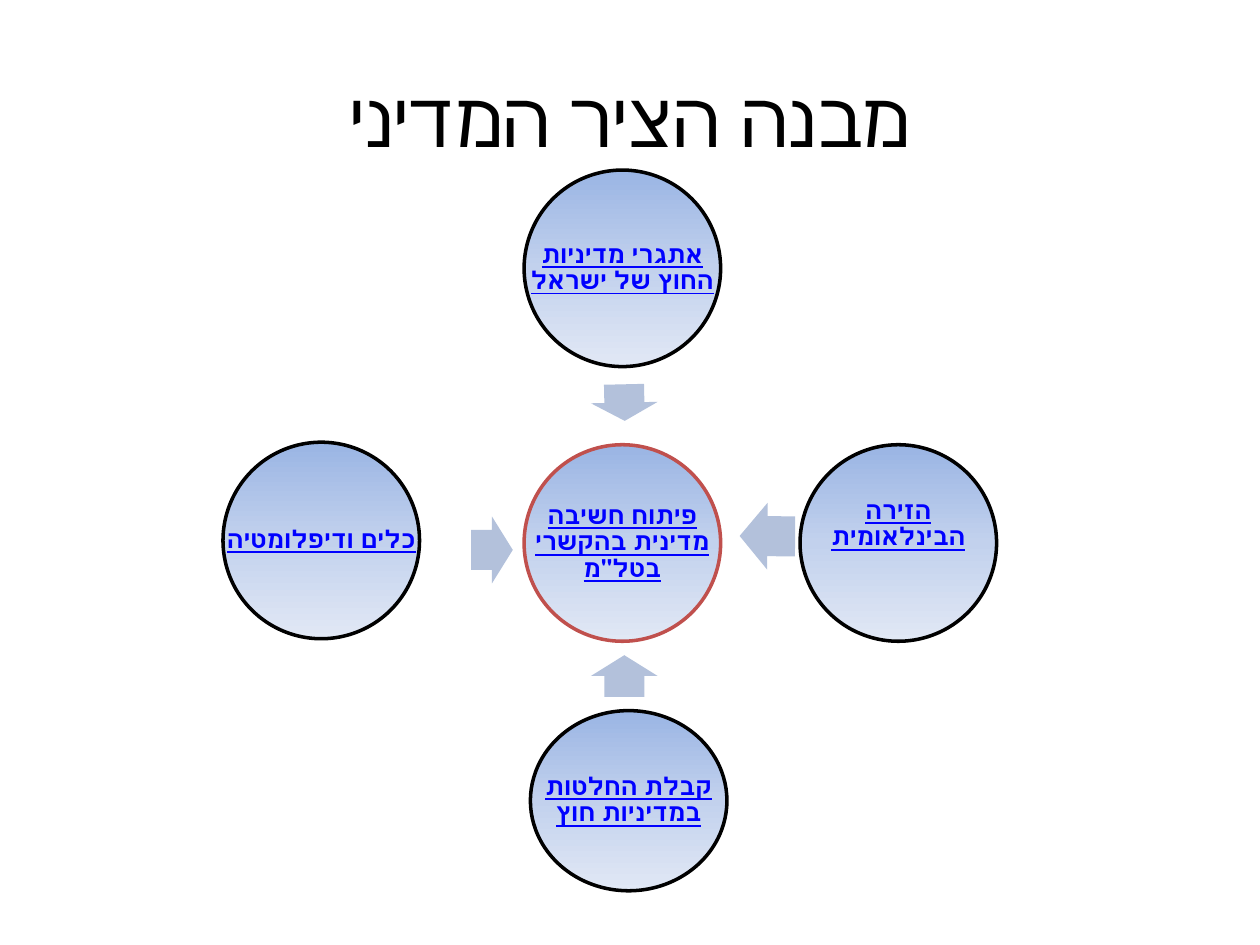
from copy import deepcopy
from pptx import Presentation
from pptx.dml.color import RGBColor
from pptx.enum import shapes, text
from pptx.util import Inches, Pt

BLACK = RGBColor(0x00, 0x00, 0x00)
RED = RGBColor(0xC0, 0x50, 0x4D)
BLUE = RGBColor(0x00, 0x00, 0xFF)
ARROW = RGBColor(0xB3, 0xC1, 0xDB)
SHADES = [(0, RGBColor(0x9A, 0xB5, 0xE4)),
          (0.5, RGBColor(0xC2, 0xD1, 0xED)),
          (1, RGBColor(0xE1, 0xE8, 0xF5))]

deck = Presentation()
deck.slide_width, deck.slide_height = Inches(10), Inches(7.5)
slide = deck.slides.add_slide(deck.slide_layouts[6])


def add_label(words, box, size, color, inset, foot=0):
    """Centred right-to-left text; foot is extra bottom inset that lifts it."""
    label = slide.shapes.add_textbox(*map(Inches, box))
    frame = label.text_frame
    frame.word_wrap = True
    frame.vertical_anchor = text.MSO_ANCHOR.MIDDLE
    frame.margin_left = frame.margin_right = frame.margin_top = Inches(inset)
    frame.margin_bottom = Inches(inset + foot)
    para = frame.paragraphs[0]
    para.text = words
    para.alignment = text.PP_ALIGN.CENTER
    para._p.get_or_add_pPr().set("rtl", "1")
    para.font.name = "Calibri"
    para.font.size = Pt(size)
    para.font.color.rgb = color
    return para


add_label("מבנה הציר המדיני", (0.5, 0.3, 9, 1.25), 44, BLACK, 0.05)

# words, left, top, height, outline, extra bottom inset
circles = [
    ('פיתוח חשיבה מדינית בהקשרי בטל"מ', 4.16, 3.53, 1.56, RED, 0),
    ("אתגרי מדיניות החוץ של ישראל", 4.16, 1.35, 1.56, BLACK, 0),
    ("הזירה הבינלאומית", 6.35, 3.53, 1.56, BLACK, 0.29),
    ("קבלת החלטות במדיניות חוץ", 4.21, 5.64, 1.43, BLACK, 0),
    ("כלים ודיפלומטיה", 1.77, 3.51, 1.56, BLACK, 0),
]
for words, left, top, height, edge, foot in circles:
    box = (left, top, 1.56, height)
    disc = slide.shapes.add_shape(shapes.MSO_SHAPE.OVAL, *map(Inches, box))
    disc.shadow.inherit = False
    disc.fill.gradient()
    disc.fill.gradient_angle = 270
    first = disc._element.spPr.xpath(".//a:gs")[0]
    first.addnext(deepcopy(first))
    for stop, (place, shade) in zip(disc.fill.gradient_stops, SHADES):
        stop.position = place
        stop.color.rgb = shade
    disc.line.color.rgb = edge
    disc.line.width = Pt(2)

    para = add_label(words, box, 14, BLUE, 0.02, foot)
    para.line_spacing = 0.9
    para.font.bold = True
    para.font.underline = True

# left, top, width, rotation
arrows = [
    (4.79, 5.1, 0.33, 270),
    (3.74, 4.1, 0.33, 0),
    (4.81, 2.93, 0.29, 88.7),
    (5.87, 3.99, 0.44, 180.4),
]
for left, top, width, turn in arrows:
    arrow = slide.shapes.add_shape(
        shapes.MSO_SHAPE.RIGHT_ARROW,
        Inches(left), Inches(top), Inches(width), Inches(0.53))
    arrow.shadow.inherit = False
    arrow.adjustments[0] = 0.6
    arrow.adjustments[1] = 0.5
    arrow.rotation = turn
    arrow.fill.solid()
    arrow.fill.fore_color.rgb = ARROW
    arrow.line.fill.background()

deck.save("out.pptx")
